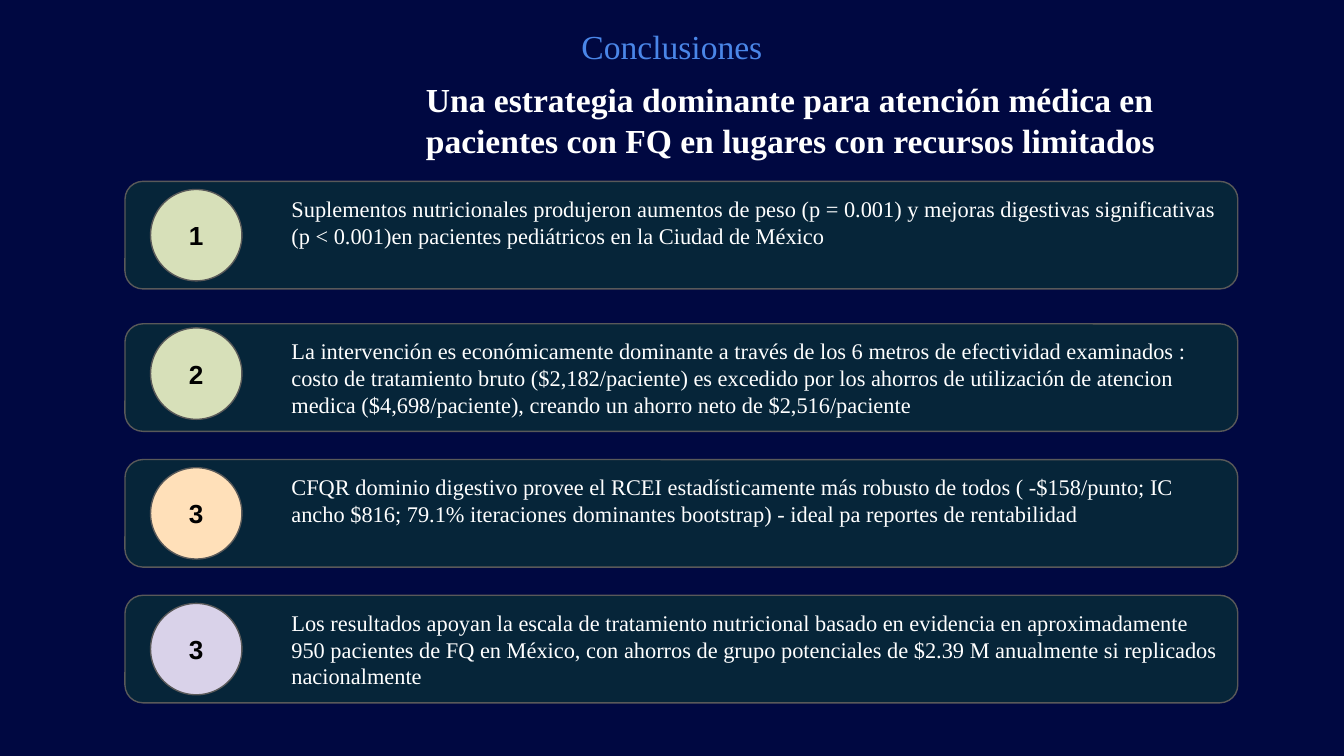
from typing import NamedTuple

from pptx import Presentation
from pptx import util as u
from pptx.dml.color import RGBColor
from pptx.enum import shapes, text

WIDTH = 10
HEIGHT = WIDTH * 9 / 16
SERIF, SANS = "Times New Roman", "Arial"
COLORS = {
    "background": "000841", "panel": "062539", "outline": "595959",
    "white": "FFFFFF", "black": "000000", "heading": "4A86E8",
    "green": "D7E0B9", "peach": "FFE0B9", "lilac": "D9D2E9",
}


class Box(NamedTuple):
    left: float
    top: float
    width: float
    height: float

    def lengths(self) -> list[u.Emu]:
        return [u.Inches(value) for value in self]


class Style(NamedTuple):
    size: int
    color: str
    font: str = SERIF
    bold: bool = False
    align: text.PP_ALIGN = text.PP_ALIGN.LEFT
    anchor: text.MSO_ANCHOR = text.MSO_ANCHOR.TOP


class Conclusion(NamedTuple):
    number: str
    color: str
    badge_inset: float
    wording: str


PANEL_LEFT, PANEL_WIDTH, PANEL_HEIGHT = 0.93, 8.28, 0.8
TEXT_LEFT = 2.07
BADGE_LEFT, BADGE_SIZE = 1.12, 0.68
FIRST_TOP, SECOND_TOP, ROW_PITCH = 1.35, 2.41, 1.01

HEADING = Style(18, "heading", align=text.PP_ALIGN.CENTER)
TITLE = Style(18, "white", bold=True)
BODY = Style(12, "white")
BADGE = Style(14, "black", SANS, True, text.PP_ALIGN.CENTER, text.MSO_ANCHOR.MIDDLE)

CONCLUSIONS = [
    Conclusion("1", "green", 0.06,
               "Suplementos nutricionales produjeron aumentos de peso (p = 0.001) y mejoras "
               "digestivas significativas (p < 0.001)en pacientes pediátricos en la Ciudad de México"),
    Conclusion("2", "green", 0.03,
               "La intervención es económicamente dominante a través de los 6 metros de "
               "efectividad examinados : costo de tratamiento bruto ($2,182/paciente) es excedido "
               "por los ahorros de utilización de atencion medica ($4,698/paciente), creando un "
               "ahorro neto de $2,516/paciente"),
    Conclusion("3", "peach", 0.06,
               "CFQR dominio digestivo provee el RCEI estadísticamente más robusto de todos "
               "( -$158/punto; IC ancho $816; 79.1% iteraciones dominantes bootstrap) - ideal pa "
               "reportes de rentabilidad"),
    Conclusion("3", "lilac", 0.06,
               "Los resultados apoyan la escala de tratamiento nutricional basado en evidencia en "
               "aproximadamente 950 pacientes de FQ en México, con ahorros de grupo potenciales "
               "de $2.39 M anualmente si replicados nacionalmente"),
]


def rgb(name: str) -> RGBColor:
    return RGBColor.from_string(COLORS[name])


def write(shape, wording: str, style: Style) -> None:
    frame = shape.text_frame
    frame.word_wrap = True
    frame.vertical_anchor = style.anchor
    frame.margin_left = frame.margin_right = u.Inches(0.1)
    frame.margin_top = frame.margin_bottom = u.Inches(0.1)
    paragraph = frame.paragraphs[0]
    paragraph.text = wording
    paragraph.alignment = style.align
    font = paragraph.font
    font.name, font.size, font.bold = style.font, u.Pt(style.size), style.bold
    font.color.rgb = rgb(style.color)


def add_text(slide, box: Box, wording: str, style: Style) -> None:
    write(slide.shapes.add_textbox(*box.lengths()), wording, style)


def add_outlined(slide, kind: shapes.MSO_SHAPE, box: Box, fill: str):
    shape = slide.shapes.add_shape(kind, *box.lengths())
    shape.shadow.inherit = False
    shape.fill.solid()
    shape.fill.fore_color.rgb = rgb(fill)
    shape.line.color.rgb = rgb("outline")
    shape.line.width = u.Pt(0.75)
    return shape


def add_conclusion(slide, top: float, conclusion: Conclusion) -> None:
    add_outlined(slide, shapes.MSO_SHAPE.ROUNDED_RECTANGLE,
                 Box(PANEL_LEFT, top, PANEL_WIDTH, PANEL_HEIGHT), "panel")
    badge = add_outlined(slide, shapes.MSO_SHAPE.OVAL,
                         Box(BADGE_LEFT, top + conclusion.badge_inset, BADGE_SIZE, BADGE_SIZE),
                         conclusion.color)
    write(badge, conclusion.number, BADGE)
    text_width = PANEL_LEFT + PANEL_WIDTH - TEXT_LEFT
    add_text(slide, Box(TEXT_LEFT, top, text_width, PANEL_HEIGHT), conclusion.wording, BODY)


def main() -> None:
    presentation = Presentation()
    presentation.slide_width, presentation.slide_height = u.Inches(WIDTH), u.Inches(HEIGHT)
    slide = presentation.slides.add_slide(presentation.slide_layouts[6])
    slide.background.fill.solid()
    slide.background.fill.fore_color.rgb = rgb("background")

    add_text(slide, Box(3.07, 0.49, 6.59, 0.86),
             "Una estrategia dominante para atención médica en pacientes con FQ en lugares "
             "con recursos limitados", TITLE)
    add_text(slide, Box(2.91, 0.09, 4.18, 0.63), "Conclusiones", HEADING)

    tops = [FIRST_TOP] + [SECOND_TOP + ROW_PITCH * row for row in range(len(CONCLUSIONS) - 1)]
    for top, conclusion in zip(tops, CONCLUSIONS):
        add_conclusion(slide, top, conclusion)

    presentation.save("out.pptx")


if __name__ == "__main__":
    main()
